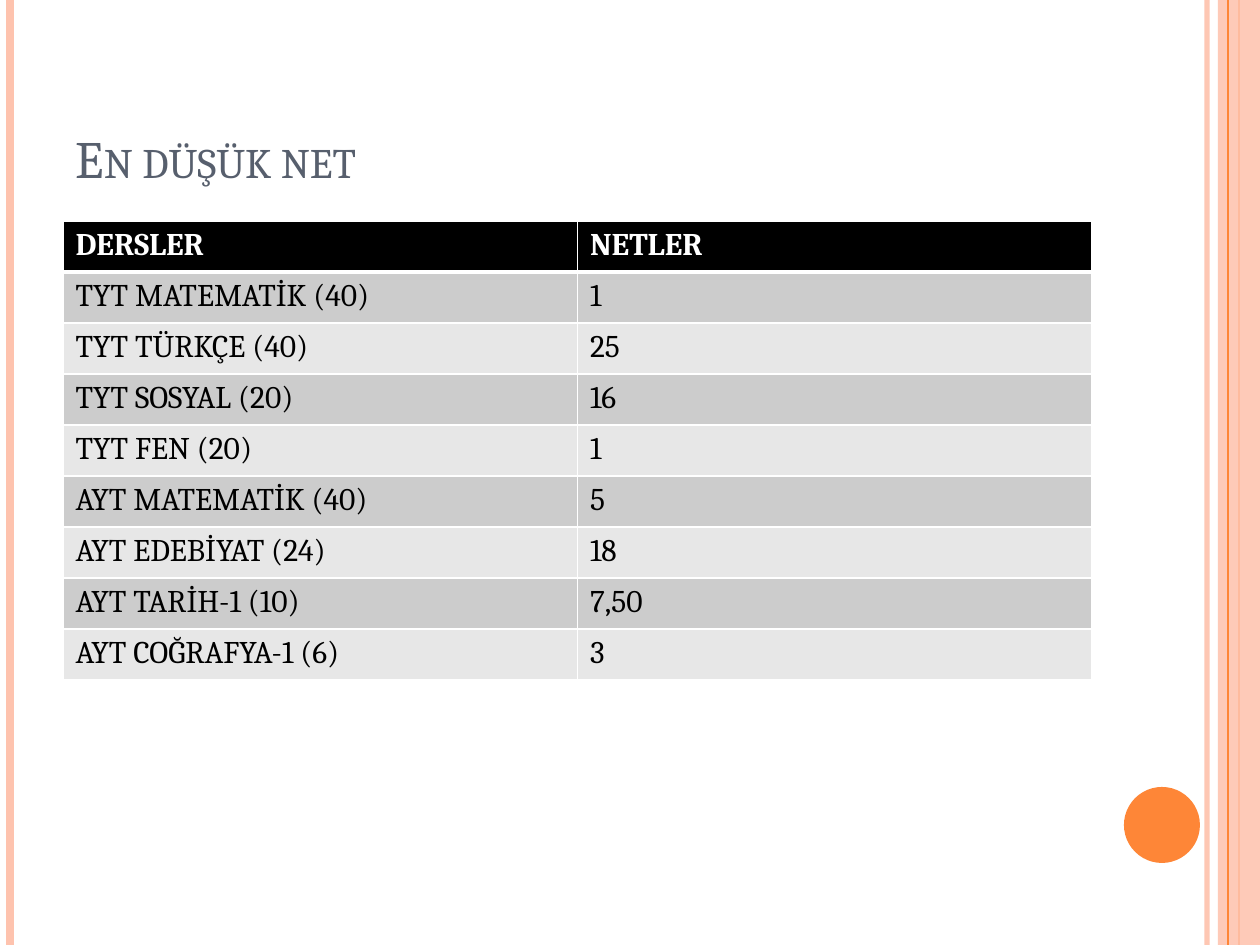
from lxml.etree import SubElement
from pptx import Presentation
from pptx.dml.color import RGBColor
from pptx.enum.shapes import MSO_CONNECTOR, MSO_SHAPE
from pptx.enum.text import MSO_ANCHOR, MSO_AUTO_SIZE, PP_ALIGN
from pptx.oxml.ns import qn
from pptx.util import Pt

EMU_PER_PX = 914400 / 126
WIDTH, HEIGHT = 1260, 945
FONT = "Cambria"
COLORS = {
    "white": "FFFFFF",
    "black": "000000",
    "title": "575F6D",
    "peach": "FEC3AE",
    "orange": "FE8637",
    "band_dark": "CCCCCC",
    "band_light": "E7E7E7",
}
ROWS = [
    ("DERSLER", "NETLER"),
    ("TYT MATEMATİK (40)", "1"),
    ("TYT TÜRKÇE (40)", "25"),
    ("TYT SOSYAL (20)", "16"),
    ("TYT FEN (20)", "1"),
    ("AYT MATEMATİK (40)", "5"),
    ("AYT EDEBİYAT (24)", "18"),
    ("AYT TARİH-1 (10)", "7,50"),
    ("AYT COĞRAFYA-1 (6)", "3"),
]


def px(n):
    return round(n * EMU_PER_PX)


def rgb(name):
    return RGBColor.from_string(COLORS[name])


class SlideBuilder:
    """Draws styled elements on the current slide."""

    def __init__(self, slide):
        self.slide = slide
        self.shapes = slide.shapes
        fill = slide.background.fill
        fill.solid()
        fill.fore_color.rgb = rgb("white")

    def set_alpha(self, sp, percent):
        clr = next(sp._element.spPr.iter(qn("a:srgbClr")))
        SubElement(clr, qn("a:alpha"), val=str(percent * 1000))

    def format_text(self, tf, size, color, bold=False):
        for p in tf.paragraphs:
            for r in p.runs:
                r.font.name = FONT
                r.font.size = Pt(size)
                r.font.bold = bold
                r.font.color.rgb = rgb(color)

    def vertical_line(self, x, color, width, alpha=None):
        line = self.shapes.add_connector(
            MSO_CONNECTOR.STRAIGHT, px(x), 0, px(x), px(HEIGHT))
        line.line.color.rgb = rgb(color)
        line.line.width = Pt(width)
        SubElement(line._element.spPr, qn("a:effectLst"))
        if alpha:
            self.set_alpha(line, alpha)

    def shape(self, kind, x, y, w, h, color, alpha=None):
        sp = self.shapes.add_shape(kind, px(x), px(y), px(w), px(h))
        sp.shadow.inherit = False
        sp.fill.solid()
        sp.fill.fore_color.rgb = rgb(color)
        sp.line.fill.background()
        if alpha:
            self.set_alpha(sp, alpha)

    def title(self, text, x, y, w, h):
        sp = self.shapes.title
        sp.left, sp.top, sp.width, sp.height = px(x), px(y), px(w), px(h)
        tf = sp.text_frame
        tf.text = text
        tf.word_wrap = True
        tf.auto_size = MSO_AUTO_SIZE.NONE
        tf.vertical_anchor = MSO_ANCHOR.BOTTOM
        p = tf.paragraphs[0]
        p.alignment = PP_ALIGN.LEFT
        self.format_text(tf, 30, "title")
        p.runs[0].font._element.set("cap", "small")

    def cell_borders(self, cell, top, bottom):
        tcPr = cell._tc.get_or_add_tcPr()
        for side, width in (("L", 1), ("R", 1), ("T", top), ("B", bottom)):
            ln = SubElement(tcPr, qn(f"a:ln{side}"), w=str(Pt(width)))
            fill = SubElement(ln, qn("a:solidFill"))
            SubElement(fill, qn("a:srgbClr"), val=COLORS["white"])

    def table(self, rows, x, y, w, row_h):
        n, cols = len(rows), len(rows[0])
        frame = self.shapes.add_table(
            n, cols, px(x), px(y), px(w), px(row_h * n))
        table = frame.table
        for i, values in enumerate(rows):
            table.rows[i].height = px(row_h)
            header = i == 0
            band = "band_dark" if i % 2 else "band_light"
            for j, value in enumerate(values):
                cell = table.cell(i, j)
                cell.text_frame.text = value
                self.format_text(cell.text_frame, 18,
                                 "white" if header else "black", header)
                self.cell_borders(cell, 3 if i == 1 else 1, 3 if header else 1)
                cell.fill.solid()
                cell.fill.fore_color.rgb = rgb("black" if header else band)


def main():
    prs = Presentation()
    prs.slide_width, prs.slide_height = px(WIDTH), px(HEIGHT)
    s = SlideBuilder(prs.slides.add_slide(prs.slide_layouts[5]))
    s.vertical_line(1207, "peach", 3, alpha=93)
    s.vertical_line(10, "peach", 4.5)
    s.vertical_line(1239, "orange", 1.5)
    s.shape(MSO_SHAPE.RECTANGLE, 1218, 0, 42, HEIGHT, "peach", alpha=87)
    s.vertical_line(1228, "orange", 0.75)
    s.shape(MSO_SHAPE.OVAL, 1124, 787, 76, 76, "orange")
    s.title("En düşük net", 63, 38, 1029, 157)
    s.table(ROWS, 63, 221, 1029, 51)
    prs.save("out.pptx")


if __name__ == "__main__":
    main()
